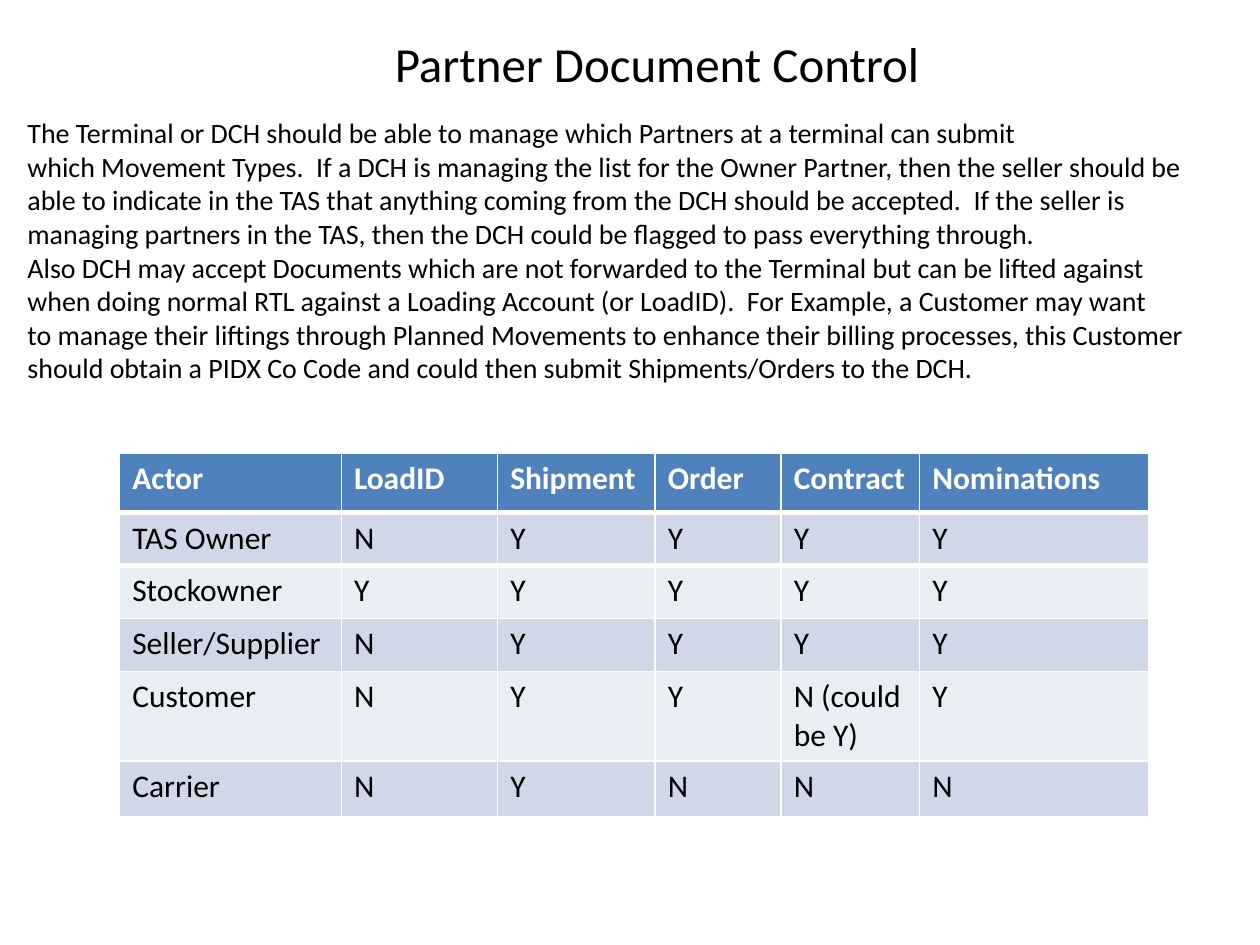
import dataclasses

import lxml.etree
import pptx
import pptx.dml.color
import pptx.enum.text
import pptx.oxml.ns
import pptx.util


@dataclasses.dataclass(frozen=True)
class Theme:
    font: str = "Calibri"
    ink: str = "000000"
    header_ink: str = "FFFFFF"
    header_fill: str = "4F81BD"
    rule: str = "FFFFFF"
    rule_width: int = 3
    bands: tuple = ("D0D8E8", "E9EDF4")
    title_size: int = 28
    body_size: int = 16
    table_size: int = 18


class SlideBuilder:
    COLUMNS = 100
    ROWS = 75

    def __init__(self, deck, theme):
        self.theme = theme
        self.column = deck.slide_width / self.COLUMNS
        self.row = deck.slide_height / self.ROWS
        self.slide = deck.slides.add_slide(deck.slide_layouts[5])

    def area(self, left, top, width, height):
        return (
            round(left * self.column),
            round(top * self.row),
            round(width * self.column),
            round(height * self.row),
        )

    def style(self, paragraph, size, color, bold=False):
        for run in paragraph.runs:
            run.font.name = self.theme.font
            run.font.size = pptx.util.Pt(size)
            run.font.bold = bold
            run.font.color.rgb = pptx.dml.color.RGBColor.from_string(color)

    def title(self, wording, *place):
        heading = self.slide.shapes.title
        heading.left, heading.top, heading.width, heading.height = self.area(*place)
        frame = heading.text_frame
        frame.text = wording
        frame.vertical_anchor = pptx.enum.text.MSO_ANCHOR.MIDDLE
        frame.paragraphs[0].alignment = pptx.enum.text.PP_ALIGN.CENTER
        self.style(frame.paragraphs[0], self.theme.title_size, self.theme.ink)

    def body(self, lines, *place):
        frame = self.slide.shapes.add_textbox(*self.area(*place)).text_frame
        frame.text = "\n".join(lines)
        frame.word_wrap = False
        frame.auto_size = pptx.enum.text.MSO_AUTO_SIZE.SHAPE_TO_FIT_TEXT
        frame.vertical_anchor = pptx.enum.text.MSO_ANCHOR.MIDDLE
        for paragraph in frame.paragraphs:
            self.style(paragraph, self.theme.body_size, self.theme.ink)

    def rule(self, cell, side):
        qn = pptx.oxml.ns.qn
        width = pptx.util.Pt(self.theme.rule_width)
        edge = lxml.etree.Element(qn(side), w=str(int(width)))
        paint = lxml.etree.SubElement(edge, qn("a:solidFill"))
        lxml.etree.SubElement(paint, qn("a:srgbClr"), val=self.theme.rule)
        cell._tc.get_or_add_tcPr().insert(0, edge)

    def table(self, records, widths, heights, left, top):
        place = self.area(left, top, sum(widths), sum(heights))
        grid = self.slide.shapes.add_table(len(records), len(widths), *place).table
        for column, width in zip(grid.columns, widths):
            column.width = round(width * self.column)
        for row, height in zip(grid.rows, heights):
            row.height = round(height * self.row)
        for index, record in enumerate(records):
            header = index == 0
            fill = self.theme.header_fill if header else self.theme.bands[(index - 1) % 2]
            ink = self.theme.header_ink if header else self.theme.ink
            for cell, wording in zip(grid.rows[index].cells, record):
                cell.text = wording
                cell.fill.solid()
                cell.fill.fore_color.rgb = pptx.dml.color.RGBColor.from_string(fill)
                self.style(cell.text_frame.paragraphs[0], self.theme.table_size, ink, header)
        for header_cell, record_cell in zip(grid.rows[0].cells, grid.rows[1].cells):
            self.rule(header_cell, "a:lnB")
            self.rule(record_cell, "a:lnT")


POLICY = [
    "The Terminal or DCH should be able to manage which Partners at a terminal can submit",
    "which Movement Types.  If a DCH is managing the list for the Owner Partner, then the seller should be",
    "able to indicate in the TAS that anything coming from the DCH should be accepted.  If the seller is",
    "managing partners in the TAS, then the DCH could be flagged to pass everything through.",
    "Also DCH may accept Documents which are not forwarded to the Terminal but can be lifted against",
    "when doing normal RTL against a Loading Account (or LoadID).  For Example, a Customer may want",
    "to manage their liftings through Planned Movements to enhance their billing processes, this Customer",
    "should obtain a PIDX Co Code and could then submit Shipments/Orders to the DCH.",
]

PERMISSIONS = [
    ("Actor", "LoadID", "Shipment", "Order", "Contract", "Nominations"),
    ("TAS Owner", "N", "Y", "Y", "Y", "Y"),
    ("Stockowner", "Y", "Y", "Y", "Y", "Y"),
    ("Seller/Supplier", "N", "Y", "Y", "Y", "Y"),
    ("Customer", "N", "Y", "Y", "N (could be Y)", "Y"),
    ("Carrier", "N", "Y", "N", "N", "N"),
]


def main():
    deck = pptx.Presentation()
    deck.slide_width = pptx.util.Inches(10)
    deck.slide_height = pptx.util.Inches(7.5)
    builder = SlideBuilder(deck, Theme())
    builder.title("Partner Document Control", 19.3, 1.2, 65.7, 7.6)
    builder.table(
        PERMISSIONS,
        widths=[17.6, 12.4, 12.5, 10, 11, 18.2],
        heights=[4.7] + [4.2] * 4 + [4.4],
        left=9.5,
        top=36,
    )
    builder.body(POLICY, 1.2, 8.55, 96, 22.6)
    deck.save("out.pptx")


if __name__ == "__main__":
    main()
